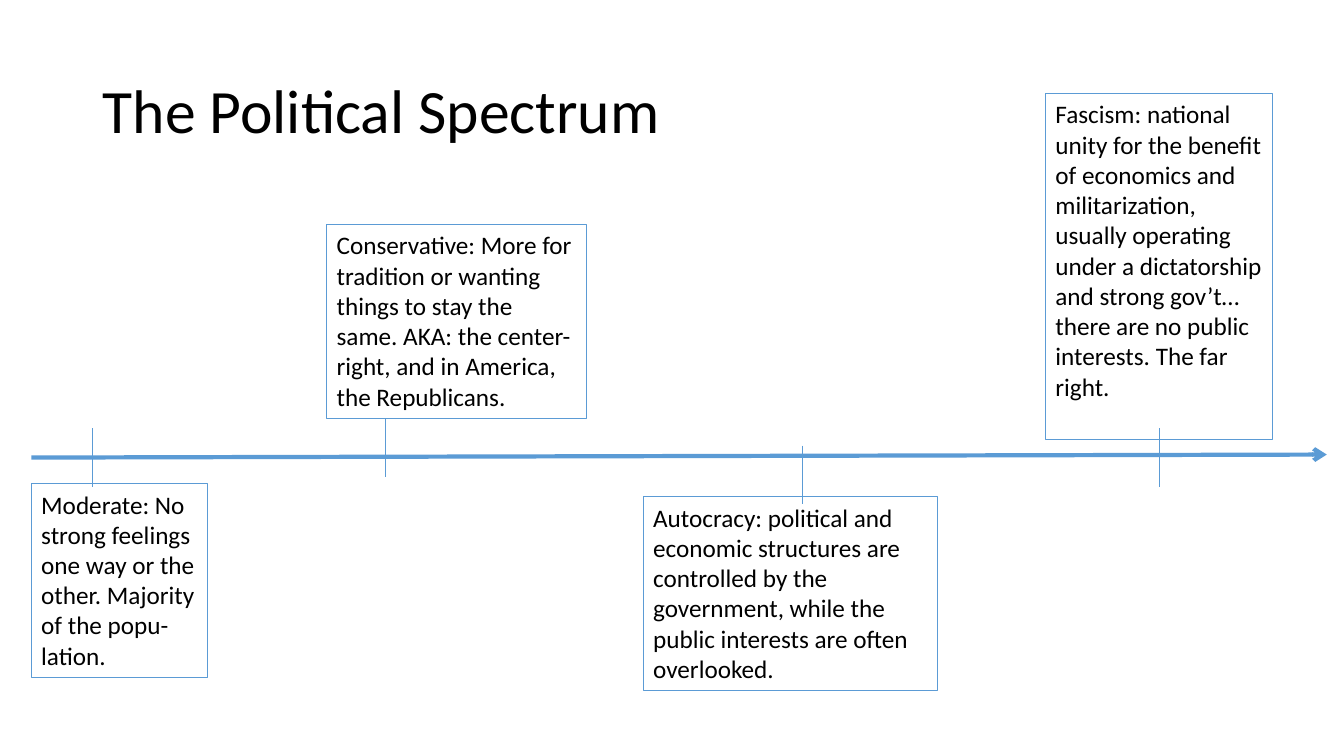
from typing import NamedTuple

from lxml import etree
from pptx import Presentation
from pptx import util as u
from pptx.dml.color import RGBColor
from pptx.enum import shapes, text
from pptx.oxml import ns

WIDTH, HEIGHT = u.Inches(13.33), u.Inches(7.5)
BLUE, BLACK = "5B9BD5", "000000"
TICK_HEIGHT = 7.8


class Area(NamedTuple):
    """Left, top, width and height in percent of the slide's size."""
    left: float
    top: float
    width: float
    height: float


class Position(NamedTuple):
    """A stance on the spectrum: its tick mark and its boxed description."""
    tick_x: float
    tick_top: float
    box: Area
    description: str


TITLE_AREA = Area(6.9, 5.33, 86.27, 19.33)
POSITIONS = [
    Position(6.9, 56.67, Area(2.33, 64, 13.13, 25.6),
             "Moderate: No strong feelings one way or the other. "
             "Majority of the popu-lation."),
    Position(28.66, 55.33, Area(24.31, 29.73, 19.35, 25.6),
             "Conservative: More for tradition or wanting things to stay the same. "
             "AKA: the center-right, and in America, the Republicans."),
    Position(59.71, 58.93, Area(47.86, 65.73, 21.91, 25.6),
             "Autocracy: political and economic structures are controlled by the "
             "government, while the public interests are often overlooked."),
    Position(86.27, 56.67, Area(77.79, 12.4, 16.88, 45.73),
             "Fascism: national unity for the benefit of economics and militarization, "
             "usually operating under a dictatorship and strong gov’t…there are no "
             "public interests. The far right."),
]


def across(percent: float) -> int:
    return round(WIDTH * percent / 100)


def down(percent: float) -> int:
    return round(HEIGHT * percent / 100)


def color(hex_code: str) -> RGBColor:
    return RGBColor.from_string(hex_code)


def place(area: Area) -> tuple[int, int, int, int]:
    return across(area.left), down(area.top), across(area.width), down(area.height)


def write(shape, wording: str, *, size: float, anchor, line_spacing: float = 1.0) -> None:
    frame = shape.text_frame
    frame.word_wrap = True
    frame.auto_size = text.MSO_AUTO_SIZE.NONE
    frame.vertical_anchor = anchor
    paragraph = frame.paragraphs[0]
    paragraph.alignment = text.PP_ALIGN.LEFT
    paragraph.line_spacing = line_spacing
    run = paragraph.add_run()
    run.text = wording
    run.font.name = "Calibri"
    run.font.size = u.Pt(size)
    run.font.color.rgb = color(BLACK)


def draw_line(slide, start: tuple[float, float], end: tuple[float, float],
              weight: float, arrow: bool = False) -> None:
    connector = slide.shapes.add_connector(
        shapes.MSO_CONNECTOR.STRAIGHT,
        across(start[0]), down(start[1]), across(end[0]), down(end[1]))
    connector.line.color.rgb = color(BLUE)
    connector.line.width = u.Pt(weight)
    if arrow:
        etree.SubElement(connector.line._get_or_add_ln(), ns.qn("a:tailEnd"), type="arrow")
    etree.SubElement(connector._element.spPr, ns.qn("a:effectLst"))


def draw_box(slide, area: Area, description: str) -> None:
    box = slide.shapes.add_shape(shapes.MSO_SHAPE.RECTANGLE, *place(area))
    box.shadow.inherit = False
    box.fill.background()
    box.line.color.rgb = color(BLUE)
    box.line.width = u.Pt(0.75)
    write(box, description, size=18, anchor=text.MSO_ANCHOR.TOP)


def main() -> None:
    presentation = Presentation()
    presentation.slide_width, presentation.slide_height = WIDTH, HEIGHT
    slide = presentation.slides.add_slide(presentation.slide_layouts[5])

    title = slide.shapes.title
    title.left, title.top, title.width, title.height = place(TITLE_AREA)
    write(title, "The Political Spectrum", size=44,
          anchor=text.MSO_ANCHOR.MIDDLE, line_spacing=0.9)

    draw_line(slide, (2.33, 60.53), (98.72, 60.13), weight=3, arrow=True)
    for position in POSITIONS:
        draw_line(slide, (position.tick_x, position.tick_top),
                  (position.tick_x, position.tick_top + TICK_HEIGHT), weight=0.5)
    for position in POSITIONS:
        draw_box(slide, position.box, position.description)

    presentation.save("out.pptx")


if __name__ == "__main__":
    main()
